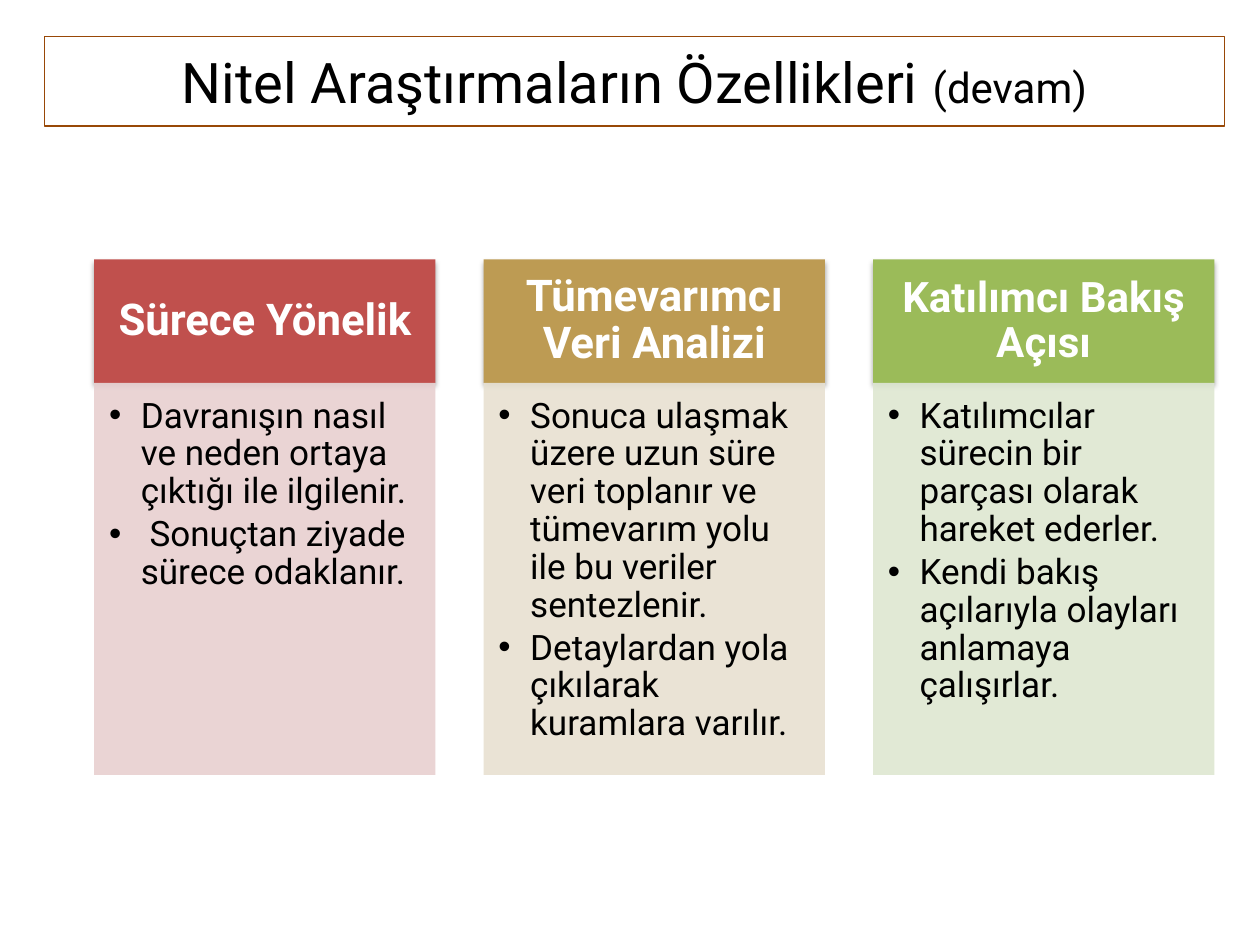
import lxml.etree
import pptx
import pptx.dml.color
import pptx.enum.shapes
import pptx.enum.text
import pptx.oxml.ns
import pptx.util

Cm, Pt = pptx.util.Cm, pptx.util.Pt
RGB = pptx.dml.color.RGBColor.from_string
ALIGN, ANCHOR = pptx.enum.text.PP_ALIGN, pptx.enum.text.MSO_ANCHOR
qn = pptx.oxml.ns.qn

TITLE = [("Nitel Araştırmaların Özellikleri ", "title"), ("(devam)", "suffix")]
COLUMNS = [
    {"head": "Sürece Yönelik", "size": 25, "fill": "C0504D", "tint": "E8D0D0",
     "items": ["Davranışın nasıl ve neden ortaya çıktığı ile ilgilenir.",
               " Sonuçtan ziyade sürece odaklanır."]},
    {"head": "Tümevarımcı Veri Analizi", "size": 25, "fill": "BD9B53", "tint": "E8E1D1",
     "items": ["Sonuca ulaşmak üzere uzun süre veri toplanır ve tümevarım yolu "
               "ile bu veriler sentezlenir.",
               "Detaylardan yola çıkılarak kuramlara varılır."]},
    {"head": "Katılımcı Bakış Açısı", "size": 24, "fill": "9BBB59", "tint": "DEE7D1",
     "items": ["Katılımcılar sürecin bir parçası olarak hareket ederler.",
               "Kendi bakış açılarıyla olayları anlamaya çalışırlar."]},
]
THEME = {"font": "Roboto", "text": "000000", "head": "FFFFFF", "border": "984807",
         "title": 32, "suffix": 24, "body": 20}

LEFT, TOP, WIDTH, PITCH = 1.9, 5.23, 6.88, 7.85
HEAD_H, BODY_H, INDENT = 2.49, 7.9, Cm(0.64)
HEAD_FRAME = {"margin_left": Cm(0.48), "margin_right": Cm(0.48), "margin_top": Cm(0.28),
              "margin_bottom": Cm(0.28), "vertical_anchor": ANCHOR.MIDDLE, "word_wrap": True}
BODY_FRAME = {"margin_left": Cm(0.3), "margin_right": Cm(0.41), "margin_top": Cm(0.3),
              "margin_bottom": Cm(0.43), "vertical_anchor": ANCHOR.TOP, "word_wrap": True}
TITLE_FRAME = {"vertical_anchor": ANCHOR.MIDDLE, "word_wrap": True,
               "auto_size": pptx.enum.text.MSO_AUTO_SIZE.NONE}


def apply(obj, values):
    for name, value in values.items():
        setattr(obj, name, value)


def add_run(p, text, size, color, bold=False):
    r = p.add_run()
    r.text = text
    apply(r.font, {"name": THEME["font"], "size": Pt(size), "bold": bold})
    r.font.color.rgb = RGB(color)


def add_child(parent, tag, **attrs):
    return lxml.etree.SubElement(parent, qn(tag), {k: str(v) for k, v in attrs.items()})


def add_panel(s, x, y, height, fill, frame):
    sp = s.shapes.add_shape(pptx.enum.shapes.MSO_SHAPE.RECTANGLE,
                            Cm(x), Cm(y), Cm(WIDTH), Cm(height))
    sp.shadow.inherit = False
    sp.fill.solid()
    sp.fill.fore_color.rgb = RGB(fill)
    sp.line.fill.background()
    apply(sp.text_frame, frame)
    return sp


def add_shadow(sp):
    effects = sp._element.spPr.find(qn("a:effectLst"))
    shadow = add_child(effects, "a:outerShdw", blurRad=Pt(3.1), dist=Pt(1.8),
                       dir=90 * 60000, rotWithShape=0)
    add_child(add_child(shadow, "a:srgbClr", val="000000"), "a:alpha", val=35000)


def add_header(s, x, column):
    sp = add_panel(s, x, TOP, HEAD_H, column["fill"], HEAD_FRAME)
    add_shadow(sp)
    p = sp.text_frame.paragraphs[0]
    apply(p, {"alignment": ALIGN.CENTER, "line_spacing": 0.9})
    add_run(p, column["head"], column["size"], THEME["head"], True)


def add_list(s, x, column):
    sp = add_panel(s, x, TOP + HEAD_H, BODY_H, column["tint"], BODY_FRAME)
    color = sp._element.spPr.find(qn("a:solidFill"))[0]
    add_child(color, "a:alpha", val=90000)
    tf = sp.text_frame
    for i, item in enumerate(column["items"]):
        p = tf.add_paragraph() if i else tf.paragraphs[0]
        pPr = p._p.get_or_add_pPr()
        pPr.set("marL", str(INDENT))
        pPr.set("indent", str(-INDENT))
        add_child(pPr, "a:buFont", typeface="Arial")
        add_child(pPr, "a:buChar", char="•")
        apply(p, {"level": 1, "alignment": ALIGN.LEFT, "line_spacing": 0.9,
                  "space_after": Pt(3)})
        add_run(p, item, THEME["body"], THEME["text"])


def add_title(s):
    sp = s.shapes.title
    apply(sp, {"left": Cm(0.89), "top": Cm(0.73), "width": Cm(23.8), "height": Cm(1.81)})
    sp.line.color.rgb = RGB(THEME["border"])
    sp.line.width = Pt(0.75)
    apply(sp.text_frame, TITLE_FRAME)
    p = sp.text_frame.paragraphs[0]
    p.alignment = ALIGN.CENTER
    for text, role in TITLE:
        add_run(p, text, THEME[role], THEME["text"])


def main():
    prs = pptx.Presentation()
    apply(prs, {"slide_width": Cm(25.4), "slide_height": Cm(19.05)})
    s = prs.slides.add_slide(prs.slide_layouts.get_by_name("Title Only"))
    add_title(s)
    for i, column in enumerate(COLUMNS):
        x = LEFT + i * PITCH
        add_header(s, x, column)
        add_list(s, x, column)
    prs.save("out.pptx")


if __name__ == "__main__":
    main()
